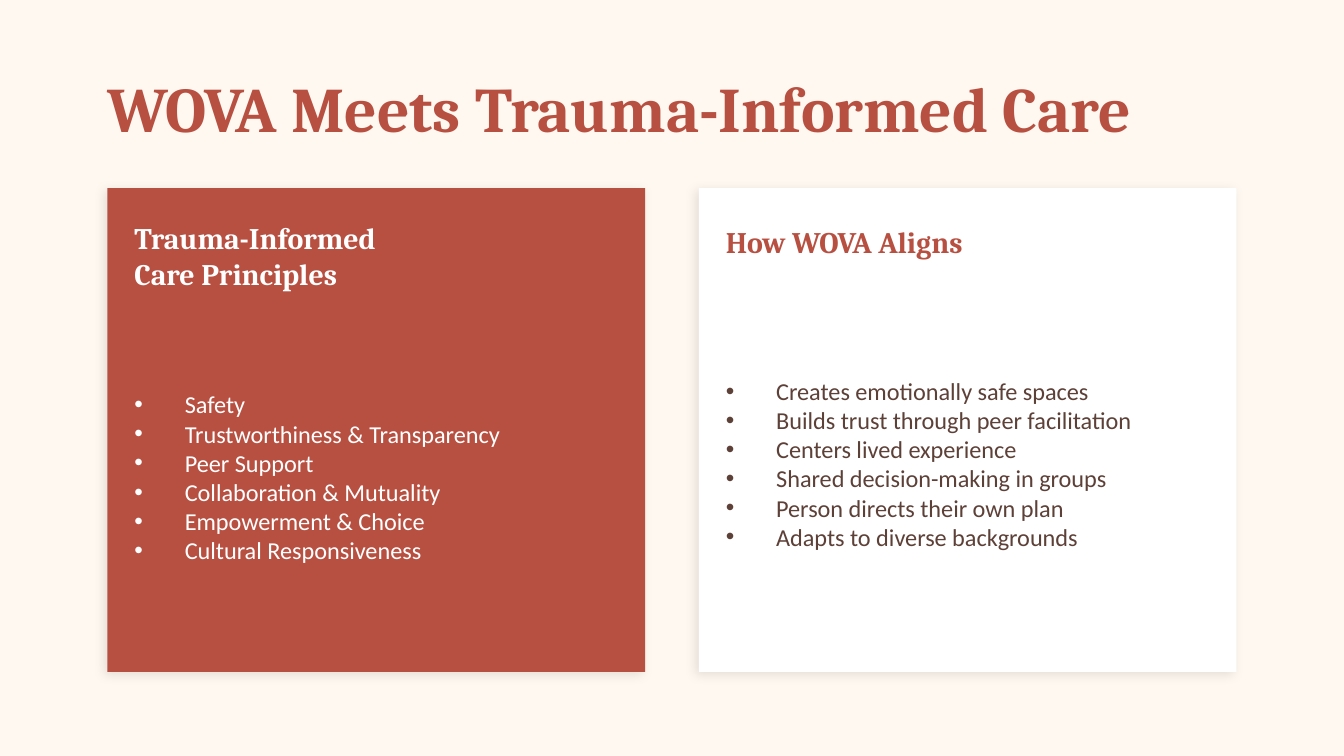
from lxml import etree
from pptx import Presentation
from pptx.dml.color import RGBColor
from pptx.enum.shapes import MSO_SHAPE
from pptx.enum.text import MSO_ANCHOR, MSO_AUTO_SIZE, PP_ALIGN
from pptx.oxml import parse_xml
from pptx.oxml.ns import nsdecls, qn
from pptx.util import Pt

PX = 4572  # 200 px to the inch
CREAM, BRICK, WHITE, BROWN = "FFF8F0", "B85042", "FFFFFF", "5D4037"

TITLE = "WOVA Meets Trauma-Informed Care"
CARDS = [
    dict(fill=BRICK, heading=["Trauma-Informed", "Care Principles"],
         heading_color=WHITE, heading_h=140, list_color=WHITE,
         items=["Safety", "Trustworthiness & Transparency", "Peer Support",
                "Collaboration & Mutuality", "Empowerment & Choice",
                "Cultural Responsiveness"]),
    dict(fill=WHITE, heading=["How WOVA Aligns"],
         heading_color=BRICK, heading_h=100, list_color=BROWN,
         items=["Creates emotionally safe spaces",
                "Builds trust through peer facilitation",
                "Centers lived experience", "Shared decision-making in groups",
                "Person directs their own plan",
                "Adapts to diverse backgrounds"]),
]
MARGIN, CARD_TOP, CARD_W, CARD_H, CARD_GAP = 160, 280, 800, 720, 80
PAD_X, HEADING_TOP, LIST_GAP, LIST_BOTTOM, INDENT = 40, 310, 20, 950, 75


def rgb(color):
    return RGBColor.from_string(color)


def place(sp, x, y, w, h):
    sp.left, sp.top, sp.width, sp.height = (v * PX for v in (x, y, w, h))


def write(sp, lines, box, font, size, color, bold=False, bullet=False):
    place(sp, *box)
    tf = sp.text_frame
    tf.margin_left = tf.margin_top = tf.margin_right = tf.margin_bottom = 0
    tf.word_wrap = True
    tf.auto_size = MSO_AUTO_SIZE.NONE
    tf.vertical_anchor = MSO_ANCHOR.MIDDLE
    tf.text = "\n".join(lines)
    for p in tf.paragraphs:
        p.alignment = PP_ALIGN.LEFT
        p.space_before = Pt(0)
        if bullet:
            pPr = p._p.get_or_add_pPr()
            pPr.set("marL", str(INDENT * PX))
            pPr.set("indent", str(-INDENT * PX))
            etree.SubElement(pPr, qn("a:buChar"), char="•")
        for r in p.runs:
            r.font.name, r.font.size, r.font.bold = font, Pt(size), bold
            r.font.color.rgb = rgb(color)


def add_card(s, x, fill):
    """Add a softly shadowed panel behind the text."""
    sp = s.shapes.add_shape(MSO_SHAPE.RECTANGLE, 0, 0, 0, 0)
    place(sp, x, CARD_TOP, CARD_W, CARD_H)
    sp.fill.solid()
    sp.fill.fore_color.rgb = rgb(fill)
    sp.line.fill.background()
    sp._element.spPr.append(parse_xml(
        f'<a:effectLst {nsdecls("a")}><a:outerShdw blurRad="{Pt(6)}" '
        f'dist="{Pt(2)}" dir="{135 * 60000}" algn="bl" rotWithShape="0">'
        '<a:srgbClr val="000000"><a:alpha val="10000"/></a:srgbClr>'
        '</a:outerShdw></a:effectLst>'))
    s.shapes._spTree.insert(2, sp._element)


prs = Presentation()
prs.slide_width, prs.slide_height = 2000 * PX, 1125 * PX
s = prs.slides.add_slide(prs.slide_layouts.get_by_name("Comparison"))
s.background.fill.solid()
s.background.fill.fore_color.rgb = rgb(CREAM)

title, *bodies = s.placeholders
write(title, [TITLE], (MARGIN, 80, 1680, 160), "Cambria", 34, BRICK, bold=True)

for i, card in enumerate(CARDS):
    x = MARGIN + i * (CARD_W + CARD_GAP)
    add_card(s, x, card["fill"])
    heading, items = bodies[2 * i:2 * i + 2]
    text_x, text_w = x + PAD_X, CARD_W - 2 * PAD_X
    write(heading, card["heading"],
          (text_x, HEADING_TOP, text_w, card["heading_h"]),
          "Cambria", 16, card["heading_color"], bold=True)
    list_top = HEADING_TOP + card["heading_h"] + LIST_GAP
    write(items, card["items"],
          (text_x, list_top, text_w, LIST_BOTTOM - list_top),
          "Calibri", 13, card["list_color"], bullet=True)

prs.save("out.pptx")
